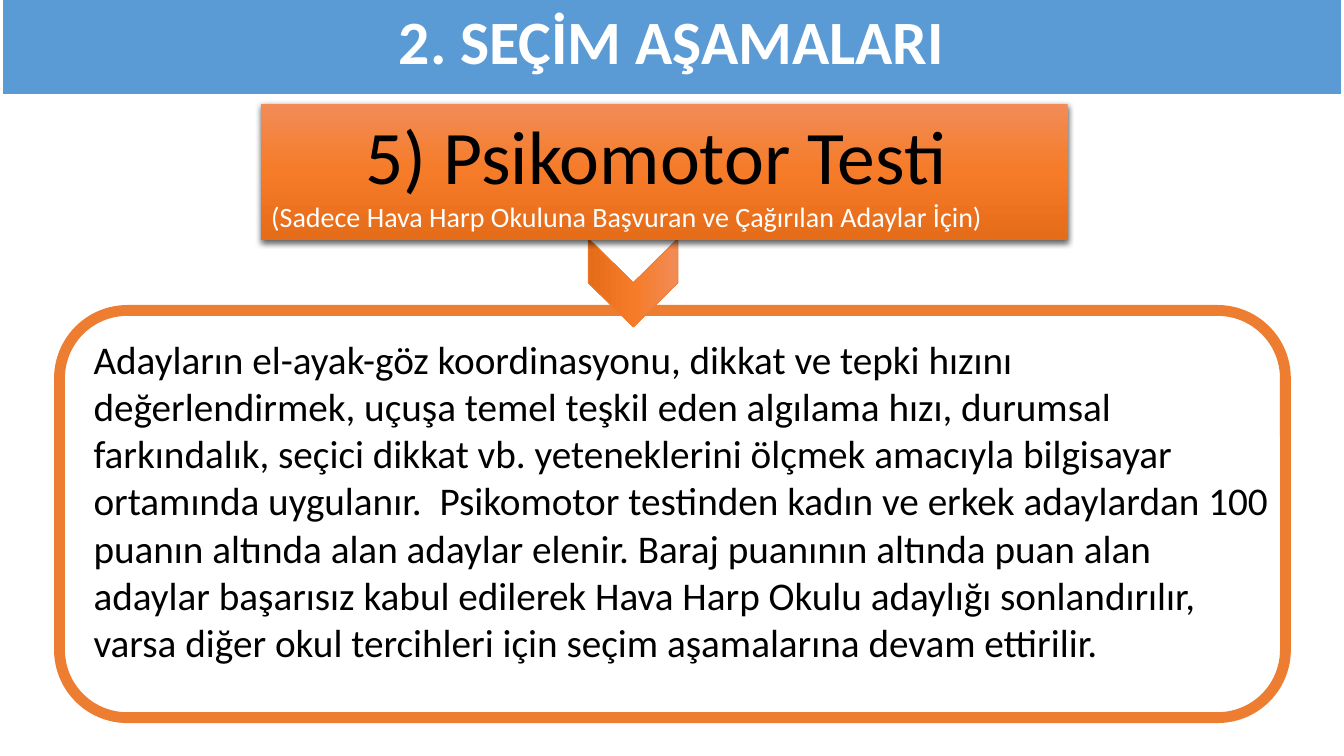
from dataclasses import dataclass

from lxml.etree import SubElement
from pptx import Presentation
from pptx.dml.color import RGBColor
from pptx.enum.shapes import MSO_SHAPE as Shape
from pptx.enum.text import MSO_ANCHOR as Anchor, MSO_AUTO_SIZE as AutoSize, PP_ALIGN as Align
from pptx.oxml.ns import qn
from pptx.util import Inches, Pt


@dataclass(frozen=True)
class Theme:
    font: str = "Calibri"
    white: str = "FFFFFF"
    black: str = "000000"
    blue: str = "5B9BD5"
    orange: str = "ED7D31"
    gradient: tuple = ((0, "F18C57"), (50, "F67B28"), (100, "E56C19"))
    title_size: int = 44
    heading_size: int = 54
    note_size: int = 20
    body_size: int = 28


class StageSlide:
    columns = 160
    rows = 90

    def __init__(self, presentation, theme):
        self.theme = theme
        self.cell_width = presentation.slide_width / self.columns
        self.cell_height = presentation.slide_height / self.rows
        self.slide = presentation.slides.add_slide(presentation.slide_layouts[5])

    def box(self, left, top, width, height):
        return (round(left * self.cell_width), round(top * self.cell_height),
                round(width * self.cell_width), round(height * self.cell_height))

    def paint(self, shape, fill, line=None, line_width=0):
        shape.fill.solid()
        shape.fill.fore_color.rgb = RGBColor.from_string(fill)
        self.outline(shape, line, line_width)

    def outline(self, shape, color, width):
        if color is None:
            shape.line.fill.background()
            return
        shape.line.color.rgb = RGBColor.from_string(color)
        shape.line.width = Pt(width)

    def set_text(self, frame, lines, anchor=Anchor.TOP, auto_size=AutoSize.NONE):
        frame.word_wrap = True
        frame.auto_size = auto_size
        frame.vertical_anchor = anchor
        for index, (text, size, color, align, bold) in enumerate(lines):
            paragraph = frame.add_paragraph() if index else frame.paragraphs[0]
            paragraph.text = text
            paragraph.alignment = align
            font = paragraph.font
            font.name, font.size, font.bold = self.theme.font, Pt(size), bold
            font.color.rgb = RGBColor.from_string(color)

    def title(self, text, *grid):
        theme = self.theme
        shape = self.slide.shapes.title
        shape.left, shape.top, shape.width, shape.height = self.box(*grid)
        self.paint(shape, theme.blue, theme.white, 1.5)
        self.set_text(shape.text_frame,
                      [(text, theme.title_size, theme.white, Align.CENTER, True)],
                      Anchor.MIDDLE)
        shape.text_frame.paragraphs[0].line_spacing = 0.9

    def shape(self, kind, *grid):
        shape = self.slide.shapes.add_shape(kind, *self.box(*grid))
        shape.shadow.inherit = False
        return shape

    def panel(self, *grid):
        self.paint(self.shape(Shape.ROUNDED_RECTANGLE, *grid),
                   self.theme.white, self.theme.orange, 7.75)

    def gradient_shape(self, kind, *grid, line=None, line_width=0):
        shape = self.shape(kind, *grid)
        shape.fill.gradient()
        shape.fill.gradient_angle = 270
        stops = shape._element.spPr.find(qn("a:gradFill")).find(qn("a:gsLst"))
        for stop in list(stops):
            stops.remove(stop)
        for position, color in self.theme.gradient:
            stop = SubElement(stops, qn("a:gs"), pos=str(position * 1000))
            SubElement(stop, qn("a:srgbClr"), val=color)
        self.outline(shape, line, line_width)
        return shape

    def chevron(self, *grid):
        shape = self.gradient_shape(Shape.CHEVRON, *grid,
                                    line=self.theme.orange, line_width=0.5)
        shape.rotation = 90

    def banner(self, heading, note, *grid):
        theme = self.theme
        shape = self.gradient_shape(Shape.RECTANGLE, *grid)
        effects = shape._element.spPr.find(qn("a:effectLst"))
        shadow = SubElement(effects, qn("a:outerShdw"), blurRad=str(Pt(4.5)),
                            dist=str(Pt(1.5)), dir="5400000", rotWithShape="0")
        color = SubElement(shadow, qn("a:srgbClr"), val=theme.black)
        SubElement(color, qn("a:alpha"), val="63000")
        self.set_text(shape.text_frame, [
            (heading, theme.heading_size, theme.black, Align.CENTER, False),
            (note, theme.note_size, theme.white, Align.LEFT, False),
        ], auto_size=AutoSize.SHAPE_TO_FIT_TEXT)

    def body(self, text, *grid):
        theme = self.theme
        shape = self.slide.shapes.add_textbox(*self.box(*grid))
        self.set_text(shape.text_frame,
                      [(text, theme.body_size, theme.black, Align.LEFT, False)],
                      auto_size=AutoSize.SHAPE_TO_FIT_TEXT)


def main():
    presentation = Presentation()
    presentation.slide_width = Inches(13.33)
    presentation.slide_height = Inches(7.5)
    stage = StageSlide(presentation, Theme())
    stage.title("2. SEÇİM AŞAMALARI", 0.24, -0.6, 159.5, 11.88)
    stage.panel(7.08, 36.96, 145.95, 48.48)
    stage.chevron(70.1, 28.32, 10.56, 10.68)
    stage.banner("5) Psikomotor Testi ",
                 "(Sadece Hava Harp Okuluna Başvuran ve Çağırılan Adaylar İçin)",
                 31.1, 12.36, 96, 16.2)
    stage.body(
        "Adayların el-ayak-göz koordinasyonu, dikkat ve tepki hızını değerlendirmek, "
        "uçuşa temel teşkil eden algılama hızı, durumsal farkındalık, seçici dikkat vb. "
        "yeteneklerini ölçmek amacıyla bilgisayar ortamında uygulanır.  Psikomotor "
        "testinden kadın ve erkek adaylardan 100 puanın altında alan adaylar elenir. "
        "Baraj puanının altında puan alan adaylar başarısız kabul edilerek Hava Harp "
        "Okulu adaylığı sonlandırılır, varsa diğer okul tercihleri için seçim "
        "aşamalarına devam ettirilir.",
        9.96, 39.36, 142.95, 40.8)
    presentation.save("out.pptx")


if __name__ == "__main__":
    main()
